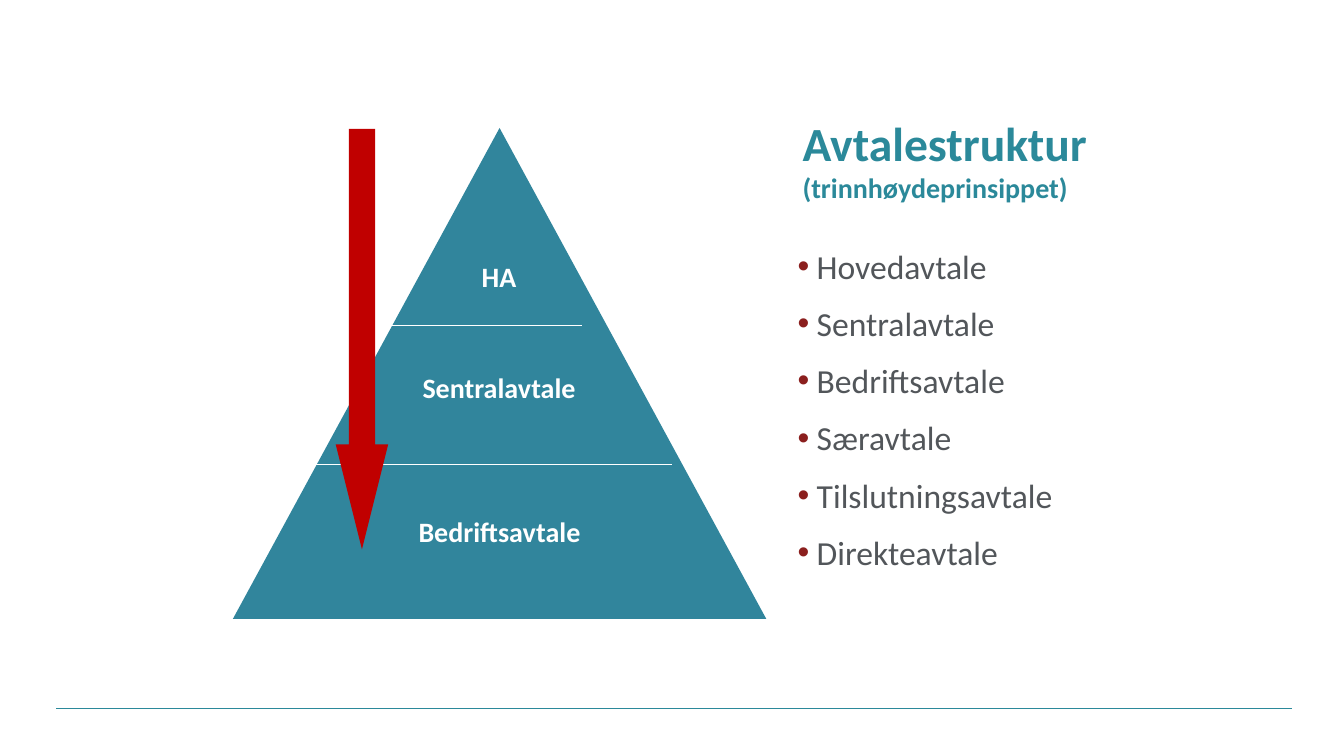
"""Build the slide on agreement structure with its pyramid and list."""
import lxml.etree
import pptx
import pptx.dml.color
import pptx.enum.shapes
import pptx.enum.text
import pptx.oxml.ns
import pptx.util

Inches = pptx.util.Inches
Pt = pptx.util.Pt
qn = pptx.oxml.ns.qn
SHAPES = pptx.enum.shapes.MSO_SHAPE
ALIGN = pptx.enum.text.PP_ALIGN
TEAL, WHITE = "2B899A", "FFFFFF"


def paint(target, color, **formats):
    """Colour a fill, line or font and apply further format values to it."""
    if hasattr(target, "solid"):
        target.solid()
        target.fore_color.rgb = pptx.dml.color.RGBColor.from_string(color)
    elif hasattr(target, "fill") and hasattr(target, "width"):
        paint(target.fill, color)
    else:
        target.color.rgb = pptx.dml.color.RGBColor.from_string(color)
    for name, value in formats.items():
        setattr(target, name, value)


def place(target, left, top, width, height):
    """Position and size a shape in inches."""
    box = {"left": left, "top": top, "width": width, "height": height}
    for name, value in box.items():
        setattr(target, name, Inches(value))


deck = pptx.Presentation()
deck.slide_width, deck.slide_height = Inches(13.33), Inches(7.5)
slide = deck.slides.add_slide(deck.slide_layouts[1])

heading = slide.shapes.title
place(heading, 7.86, 0.83, 4.73, 1.25)
heading_format = {
    "vertical_anchor": pptx.enum.text.MSO_ANCHOR.BOTTOM,
    "word_wrap": True,
    "auto_size": pptx.enum.text.MSO_AUTO_SIZE.NONE,
}
for name, value in heading_format.items():
    setattr(heading.text_frame, name, value)
heading_line = heading.text_frame.paragraphs[0]
heading_line.alignment = ALIGN.LEFT
for words, size in [("Avtalestruktur ", 34), ("(trinnhøydeprinsippet)", 20)]:
    run = heading_line.add_run()
    run.text = words
    paint(run.font, TEAL, name="Calibri", size=Pt(size), bold=True)

agreements = slide.placeholders[1]
place(agreements, 7.81, 2.39, 5, 4.85)
agreements.text_frame.auto_size = pptx.enum.text.MSO_AUTO_SIZE.NONE
agreements.text_frame.text = "\n".join([
    "Hovedavtale", "Sentralavtale", "Bedriftsavtale",
    "Særavtale", "Tilslutningsavtale", "Direkteavtale",
])
for index, agreement in enumerate(agreements.text_frame.paragraphs):
    agreement.space_before = Pt(12 if index else 0)
    agreement.line_spacing = 1.0
    properties = agreement._p.get_or_add_pPr()
    properties.set("marL", str(Inches(0.19)))
    properties.set("indent", str(-Inches(0.19)))
    bullet_color = lxml.etree.SubElement(properties, qn("a:buClr"))
    lxml.etree.SubElement(bullet_color, qn("a:srgbClr"), val="8B1F1E")
    lxml.etree.SubElement(properties, qn("a:buFont"), typeface="Arial")
    lxml.etree.SubElement(properties, qn("a:buChar"), char="•")
    paint(agreement.runs[0].font, "52565A", name="Calibri", size=Pt(24))

pyramid_and_arrow = [
    (SHAPES.ISOSCELES_TRIANGLE, (2.31, 1.27, 5.29, 4.87), "31859C", [0.5]),
    (SHAPES.DOWN_ARROW, (3.33, 1.28, 0.52, 4.17), "C00000", [0.5, 2.0]),
]
rules = [
    (0.56, 12.81, 7.03, TEAL, 1),
    (3.88, 5.77, 3.23, WHITE, 0.75),
    (3.03, 6.67, 4.61, WHITE, 0.75),
]
levels = [
    ("HA", 4.17, 2.53, 1.56),
    ("Sentralavtale", 3.39, 3.63, 3.12),
    ("Bedriftsavtale", 2.09, 5.06, 5.73),
]

for kind, box, color, adjustments in pyramid_and_arrow:
    if kind == SHAPES.DOWN_ARROW:
        for start, end, height, rule_color, weight in rules:
            rule = slide.shapes.add_connector(
                pptx.enum.shapes.MSO_CONNECTOR.STRAIGHT,
                Inches(start), Inches(height), Inches(end), Inches(height))
            paint(rule.line, rule_color, width=Pt(weight))
            lxml.etree.SubElement(rule._element.spPr, qn("a:effectLst"))
        for words, left, top, width in levels:
            level = slide.shapes.add_textbox(
                Inches(left), Inches(top), Inches(width), Inches(0.44))
            level.text_frame.word_wrap = True
            level.text_frame.auto_size = pptx.enum.text.MSO_AUTO_SIZE.SHAPE_TO_FIT_TEXT
            level.text_frame.text = words
            level_line = level.text_frame.paragraphs[0]
            level_line.alignment = ALIGN.CENTER
            paint(level_line.runs[0].font, WHITE, name="Calibri", size=Pt(20), bold=True)
    figure = slide.shapes.add_shape(kind, *map(Inches, box))
    for index, adjustment in enumerate(adjustments):
        figure.adjustments[index] = adjustment
    paint(figure.fill, color)
    figure.line.fill.background()
    figure.shadow.inherit = False

deck.save("out.pptx")
